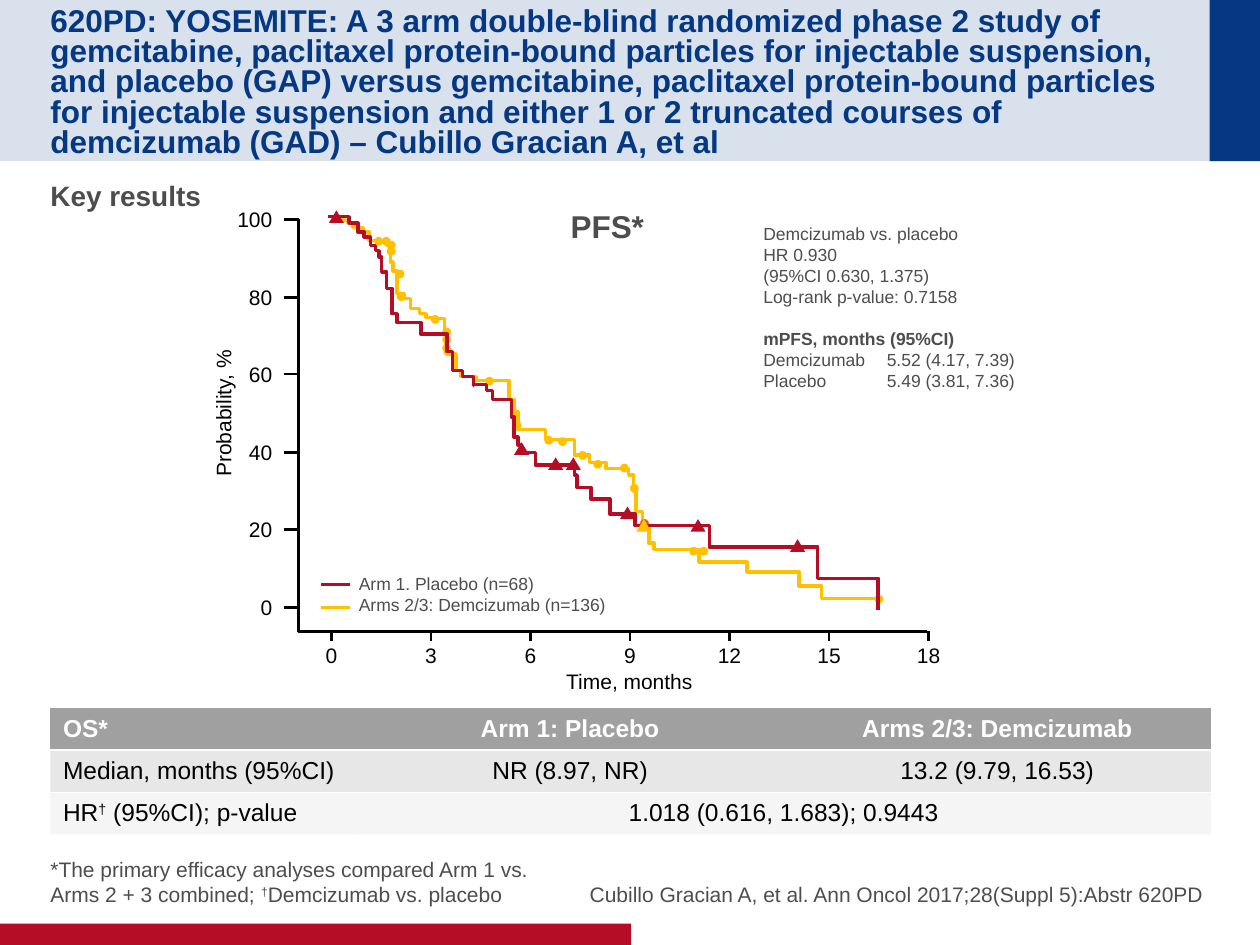
from lxml import etree
from pptx import Presentation
from pptx.dml.color import RGBColor
from pptx.enum.shapes import MSO_CONNECTOR, MSO_SHAPE
from pptx.enum.text import MSO_ANCHOR, MSO_AUTO_SIZE, PP_ALIGN
from pptx.oxml.ns import qn
from pptx.util import Pt

EMU_PER_PX = 9144  # 100 px to the inch
LEFT, CENTER, RIGHT = PP_ALIGN.LEFT, PP_ALIGN.CENTER, PP_ALIGN.RIGHT
TOP, MIDDLE, BOTTOM = MSO_ANCHOR.TOP, MSO_ANCHOR.MIDDLE, MSO_ANCHOR.BOTTOM
RECTANGLE, OVAL, TRIANGLE = MSO_SHAPE.RECTANGLE, MSO_SHAPE.OVAL, MSO_SHAPE.ISOSCELES_TRIANGLE
STRAIGHT = MSO_CONNECTOR.STRAIGHT
COLORS = {"navy": "043882", "red": "B60D27", "yellow": "FFC000", "orange": "E75B00",
          "text": "4D4D4D", "gray": "A0A0A0", "black": "000000", "white": "FFFFFF"}
PLAIN_TABLE = "{2D5ABB26-0587-4C30-8999-92F81FD0307C}"

TITLE = ("620PD: YOSEMITE: A 3 arm double-blind randomized phase 2 study of gemcitabine, "
         "paclitaxel protein-bound particles for injectable suspension, and placebo (GAP) versus "
         "gemcitabine, paclitaxel protein-bound particles for injectable suspension and either "
         "1 or 2 truncated courses of demcizumab (GAD) – Cubillo Gracian A, et al")
FOOTNOTE = ("*The primary efficacy analyses compared Arm 1 vs. Arms 2 + 3 combined; "
            "|†|Demcizumab vs. placebo")
CITATION = "Cubillo Gracian A, et al. Ann Oncol 2017;28(Suppl 5):Abstr 620PD "
OS_ROWS = [("OS*", "Arm 1: Placebo", "Arms 2/3: Demcizumab"),
           ("Median, months (95%CI)", "NR (8.97, NR)", "13.2 (9.79, 16.53)"),
           ("HR|†| (95%CI); p-value", "1.018 (0.616, 1.683); 0.9443", "")]

CURVE_START = (260, 172)
# Each step runs across to x, then down to y.
DEMCIZUMAB_STEPS = [
    (273, 175), (276, 177), (280, 180), (284, 181), (288, 184), (293, 191), (307, 195),
    (310, 208), (312, 215), (315, 233), (321, 237), (326, 245), (333, 249), (338, 252),
    (343, 253), (353, 264), (354, 281), (362, 294), (366, 299), (378, 302), (404, 317),
    (408, 327), (411, 341), (433, 349), (456, 361), (468, 367), (481, 372), (499, 377),
    (503, 390), (505, 406), (510, 417), (515, 431), (519, 436), (555, 446), (593, 454),
    (634, 465), (652, 475), (697, 475)]
PLACEBO_STEPS = [
    (277, 177), (284, 184), (289, 188), (294, 195), (298, 199), (301, 204), (303, 216),
    (307, 229), (311, 249), (315, 256), (334, 265), (355, 279), (359, 294), (367, 299),
    (376, 306), (376, 305), (386, 310), (391, 317), (406, 331), (408, 347), (411, 353),
    (413, 359), (425, 369), (456, 377), (458, 387), (469, 396), (484, 408), (504, 417),
    (563, 434), (649, 459), (697, 484)]
DEMCIZUMAB_DOTS = [
    (694, 472), (555, 434), (547, 434), (500, 384), (492, 368), (471, 365), (459, 358),
    (443, 347), (432, 346), (407, 334), (406, 325), (385, 299), (351, 273), (351, 266),
    (351, 260), (342, 250), (315, 232), (314, 214), (307, 196), (307, 191), (303, 188),
    (297, 188)]
PLACEBO_TRIANGLES = [(627, 428), (548, 412), (492, 402), (449, 363), (435, 363),
                     (408, 351), (261, 167)]


def emu(*lengths):
    return [round(length * EMU_PER_PX) for length in lengths]


def rgb(color):
    return RGBColor.from_string(COLORS[color])


def assign(target, values):
    for name, value in values.items():
        setattr(target, name, value)


class SlideBuilder:
    font = "Arial"

    def __init__(self, page):
        self.page = page

    def paint(self, fill, color, opacity=100):
        fill.solid()
        fill.fore_color.rgb = rgb(color)
        if opacity < 100:
            tint = fill._xPr.find(qn("a:solidFill"))[0]
            etree.SubElement(tint, qn("a:alpha"), val=str(opacity * 1000))

    def stroke(self, line, color, width):
        line.color.rgb = rgb(color)
        line.width = Pt(width)

    def paragraph(self, para, text, size=12, color="text", bold=False, **layout):
        """Fill a paragraph; "|" splits spans, and a lone † is raised."""
        assign(para, {"alignment": LEFT, "space_before": Pt(0), **layout})
        for part in text.split("|"):
            span = para.add_run()
            span.text = part
            assign(span.font, {"name": self.font, "size": Pt(size), "bold": bold})
            span.font.color.rgb = rgb(color)
            if part == "†":
                span._r.get_or_add_rPr().set("baseline", "30000")

    def placeholder(self, index, box, text, anchor, margins=(0, 0), **style):
        holder = self.page.placeholders[index]
        assign(holder, dict(zip(("left", "top", "width", "height"), emu(*box))))
        top, bottom = emu(*margins)
        assign(holder.text_frame, {
            "margin_left": 0, "margin_right": 0, "margin_top": top, "margin_bottom": bottom,
            "vertical_anchor": anchor, "auto_size": MSO_AUTO_SIZE.NONE, "word_wrap": True})
        para = holder.text_frame.paragraphs[0]
        self.paragraph(para, text, **style)
        properties = para._p.get_or_add_pPr()
        properties.set("marL", "0")
        properties.set("indent", "0")
        etree.SubElement(properties, qn("a:buNone"))

    def text(self, box, lines, anchor=TOP, wrap=False, rotation=0, **style):
        """Add a text box; a line is a string or a pair of string and style."""
        shape = self.page.shapes.add_textbox(*emu(*box))
        shape.rotation = rotation
        frame = shape.text_frame
        assign(frame, {"word_wrap": wrap, "vertical_anchor": anchor})
        for number, line in enumerate(lines):
            text, extra = (line, {}) if isinstance(line, str) else line
            para = frame.add_paragraph() if number else frame.paragraphs[0]
            self.paragraph(para, text, **{**style, **extra})
            if "\t" in text:
                tabs = etree.SubElement(para._p.get_or_add_pPr(), qn("a:tabLst"))
                etree.SubElement(tabs, qn("a:tab"), pos=str(emu(98)[0]), algn="l")

    def shape(self, kind, box, color, opacity=100):
        shape = self.page.shapes.add_shape(kind, *emu(*box))
        shape.shadow.inherit = False
        shape.line.fill.background()
        self.paint(shape.fill, color, opacity)

    def line(self, start, end, color="black", width=1.5):
        connector = self.page.shapes.add_connector(STRAIGHT, *emu(*start, *end))
        self.stroke(connector.line, color, width)
        etree.SubElement(connector._element.spPr, qn("a:effectLst"))

    def outline(self, points, color="black", width=1.5):
        builder = self.page.shapes.build_freeform(*points[0], scale=EMU_PER_PX)
        builder.add_line_segments(points[1:], close=False)
        shape = builder.convert_to_shape()
        shape.shadow.inherit = False
        shape.fill.background()
        self.stroke(shape.line, color, width)

    def step_curve(self, steps, color):
        points = [CURVE_START]
        for x, y in steps:
            points += [(x, points[-1][1]), (x, y)]
        self.outline(points, color, 2)

    def table(self, box, widths, rows):
        frame = self.page.shapes.add_table(len(rows), len(widths), *emu(*box))
        table = frame.table
        table._tbl.tblPr.find(qn("a:tableStyleId")).text = PLAIN_TABLE
        for column, width in zip(table.columns, emu(*widths)):
            column.width = width
        table.cell(2, 1).merge(table.cell(2, 2))
        for r, (row, opacity) in enumerate(zip(rows, (100, 25, 10))):
            for c, text in enumerate(row):
                cell = table.cell(r, c)
                cell.vertical_anchor = MIDDLE
                self.paint(cell.fill, "gray", opacity)
                if text:
                    self.paragraph(cell.text_frame.paragraphs[0], text, size=14, bold=r == 0,
                                   color="black" if r else "white",
                                   alignment=CENTER if c else LEFT, space_before=Pt(2.8))
                if r < 2:
                    self.cell_border(cell, "lnB" if r == 0 else "lnT")

    def cell_border(self, cell, side):
        border = etree.Element(qn(f"a:{side}"), w=str(Pt(1)))
        fill = etree.SubElement(border, qn("a:solidFill"))
        etree.SubElement(fill, qn("a:srgbClr"), val=COLORS["white"])
        cell._tc.get_or_add_tcPr().insert(0, border)


def draw_axes(slide):
    slide.outline([(237, 174), (237, 501), (736, 501)])
    for i in range(6):
        y = 174 + round(61.6 * i)
        slide.line((225, y), (237, y))
        slide.text((162, y - 17, 64, 34), [str(100 - 20 * i)], anchor=MIDDLE,
                   color="black", alignment=RIGHT)
    for i in range(7):
        x = 263 + 79 * i
        slide.line((x, 501), (x, 509))
        slide.text((x - 20, 505, 40, 30), [str(3 * i)], color="black", alignment=CENTER)
    slide.text((116, 313, 122, 30), ["Probability, %"], rotation=270, color="black",
               alignment=CENTER)
    slide.text((439, 526, 121, 30), ["Time, months"], color="black", alignment=CENTER)


def draw_curves(slide):
    slide.step_curve(DEMCIZUMAB_STEPS, "yellow")
    slide.shape(OVAL, (508, 412, 7, 7), "orange")
    for x, y in DEMCIZUMAB_DOTS:
        slide.shape(OVAL, (x, y, 7, 7), "yellow")
    slide.step_curve(PLACEBO_STEPS, "red")
    for x, y in PLACEBO_TRIANGLES:
        slide.shape(TRIANGLE, (x, y, 12, 10), "red")
    slide.shape(TRIANGLE, (505, 412, 12, 10), "yellow")


def main():
    deck = Presentation()
    deck.slide_width, deck.slide_height = emu(1000, 750)
    page = deck.slides.add_slide(deck.slide_layouts.get_by_name("Comparison"))
    spare = page.placeholders[4]._element
    spare.getparent().remove(spare)
    slide = SlideBuilder(page)

    slide.shape(RECTANGLE, (0, 0, 1000, 128), "navy", 15)
    slide.shape(RECTANGLE, (960, 0, 40, 128), "navy")
    slide.shape(RECTANGLE, (0, 733, 501, 17), "red")
    slide.placeholder(0, (40, 20, 901, 88), TITLE, MIDDLE, (5, 0), size=18, color="navy",
                      bold=True, line_spacing=0.8)
    slide.placeholder(1, (40, 137, 920, 519), "Key results", TOP, (5, 5), size=16, bold=True)
    slide.placeholder(2, (40, 667, 422, 53), FOOTNOTE, BOTTOM)
    slide.placeholder(3, (459, 667, 501, 53), CITATION, BOTTOM, alignment=RIGHT)

    slide.text((443, 159, 79, 40), ["PFS*"], size=18, bold=True)
    slide.table((40, 562, 921, 100), (243, 339, 339), OS_ROWS)
    draw_axes(slide)
    slide.text((596, 172, 349, 162), [
        "Demcizumab vs. placebo", "HR 0.930", "(95%CI 0.630, 1.375)",
        "Log-rank p-value: 0.7158",
        ("mPFS, months (95%CI)", {"bold": True, "space_before": Pt(12)}),
        "Demcizumab\t5.52 (4.17, 7.39)", "Placebo\t5.49 (3.81, 7.36)"], wrap=True, size=10)
    draw_curves(slide)
    slide.text((275, 450, 224, 44), ["Arm 1. Placebo (n=68)", "Arms 2/3: Demcizumab (n=136)"],
               size=10)
    for y, color in ((464, "red"), (482, "yellow")):
        slide.line((255, y), (278, y), color, 2)
    deck.save("out.pptx")


if __name__ == "__main__":
    main()
